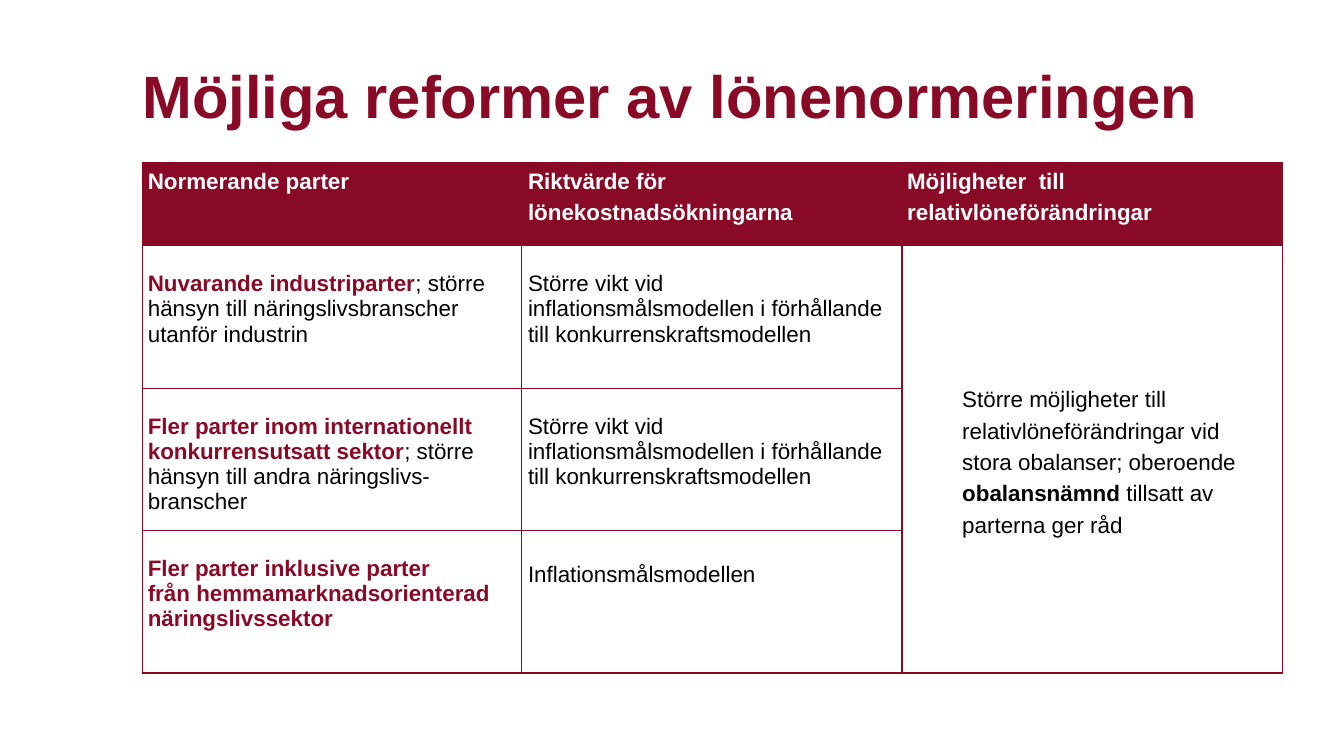
import pptx
import pptx.util
import pptx.dml.color
import pptx.enum.text
import pptx.oxml.ns
from lxml import etree

Pt = pptx.util.Pt
ANCHOR = pptx.enum.text.MSO_ANCHOR
COLORS = {"wine": "880A26", "frame": "880723", "white": "FFFFFF", "black": "000000"}

TITLE = "Möjliga reformer av lönenormeringen"
HEADERS = [
    "Normerande parter",
    "Riktvärde för lönekostnadsökningarna",
    "Möjligheter  till relativlöneförändringar",
]
INFLATION = "Större vikt vid inflationsmålsmodellen i förhållande till konkurrenskraftsmodellen"
PARTIES = [
    [[("Nuvarande industriparter", True),
      ("; större hänsyn till näringslivsbranscher utanför industrin", False)]],
    [[("Fler parter inom internationellt konkurrensutsatt sektor", True),
      ("; större hänsyn till andra näringslivs-branscher", False)]],
    [[("Fler parter inklusive parter", True)],
     [("från hemmamarknadsorienterad näringslivssektor", True)]],
]
TARGETS = [(INFLATION, 1), (INFLATION, 1), ("Inflationsmålsmodellen", 1.25)]
RELATIVE = [
    [("Större möjligheter till relativlöneförändringar vid", False)],
    [("stora obalanser; oberoende ", False), ("obalansnämnd", True),
     (" tillsatt av parterna ger råd", False)],
]

LEFT, TOP = 76.3, 87.1
WIDTHS = [203, 203.8, 203.8]
HEIGHTS = [44.6, 76.3, 76.3, 76.3]
SIDE, LEAD = 2.9, 13.8


def write(tf, paragraphs, size=12, color="black", strong="black", spacing=1):
    for i, runs in enumerate(paragraphs):
        p = tf.paragraphs[0] if i == 0 else tf.add_paragraph()
        p.alignment = pptx.enum.text.PP_ALIGN.LEFT
        p.line_spacing = spacing
        p.space_before = p.space_after = Pt(0)
        for text, bold in runs:
            r = p.add_run()
            r.text = text
            r.font.name = "Arial"
            r.font.size = Pt(size)
            r.font.bold = bold
            r.font.color.rgb = pptx.dml.color.RGBColor.from_string(
                COLORS[strong if bold else color])


def set_margins(box, left, top, right, bottom):
    box.margin_left, box.margin_top = Pt(left), Pt(top)
    box.margin_right, box.margin_bottom = Pt(right), Pt(bottom)


def set_borders(cell, row, col):
    qn = pptx.oxml.ns.qn
    tcPr = cell._tc.get_or_add_tcPr()
    inner = {"L": col > 0, "R": col < len(WIDTHS) - 1, "T": False, "B": False}
    for i, (side, divider) in enumerate(inner.items()):
        ln = etree.Element(qn("a:ln" + side), w=str(Pt(1 if divider else 0.75)))
        fill = etree.SubElement(ln, qn("a:solidFill"))
        etree.SubElement(fill, qn("a:srgbClr"), val=COLORS["wine" if divider else "frame"])
        tcPr.insert(i, ln)


prs = pptx.Presentation()
prs.slide_width, prs.slide_height = Pt(720), Pt(405)
s = prs.slides.add_slide(prs.slide_layouts[5])

title = s.shapes.title
title.left, title.top, title.width, title.height = Pt(LEFT), Pt(16.6), Pt(607.7), Pt(67.7)
tf = title.text_frame
tf.word_wrap = True
tf.auto_size = pptx.enum.text.MSO_AUTO_SIZE.NONE
tf.vertical_anchor = ANCHOR.MIDDLE
set_margins(tf, 0, 3.6, 7.2, 3.6)
write(tf, [[(TITLE, True)]], size=32, strong="wine")

table = s.shapes.add_table(len(HEIGHTS), len(WIDTHS), Pt(LEFT), Pt(TOP),
                           Pt(sum(WIDTHS)), Pt(sum(HEIGHTS))).table
for column, width in zip(table.columns, WIDTHS):
    column.width = Pt(width)
for row, height in zip(table.rows, HEIGHTS):
    row.height = Pt(height)

for i in range(len(HEIGHTS)):
    for j in range(len(WIDTHS)):
        cell = table.cell(i, j)
        cell.fill.solid()
        cell.fill.fore_color.rgb = pptx.dml.color.RGBColor.from_string(
            COLORS["white" if i else "wine"])
        set_borders(cell, i, j)
        set_margins(cell, SIDE + (0.7 if j == 1 else 0), LEAD if i else 0, SIDE, 0)

for j, header in enumerate(HEADERS):
    write(table.cell(0, j).text_frame, [[(header, True)]], strong="white", spacing=1.25)
for i, (party, (target, spacing)) in enumerate(zip(PARTIES, TARGETS), 1):
    write(table.cell(i, 0).text_frame, party, strong="wine")
    write(table.cell(i, 1).text_frame, [[(target, False)]], spacing=spacing)

merged = table.cell(1, 2)
merged.merge(table.cell(3, 2))
merged.vertical_anchor = ANCHOR.MIDDLE
set_margins(merged, 32.4, 10.8, 0, 10.8)
write(merged.text_frame, RELATIVE, spacing=1.25)

prs.save("out.pptx")
